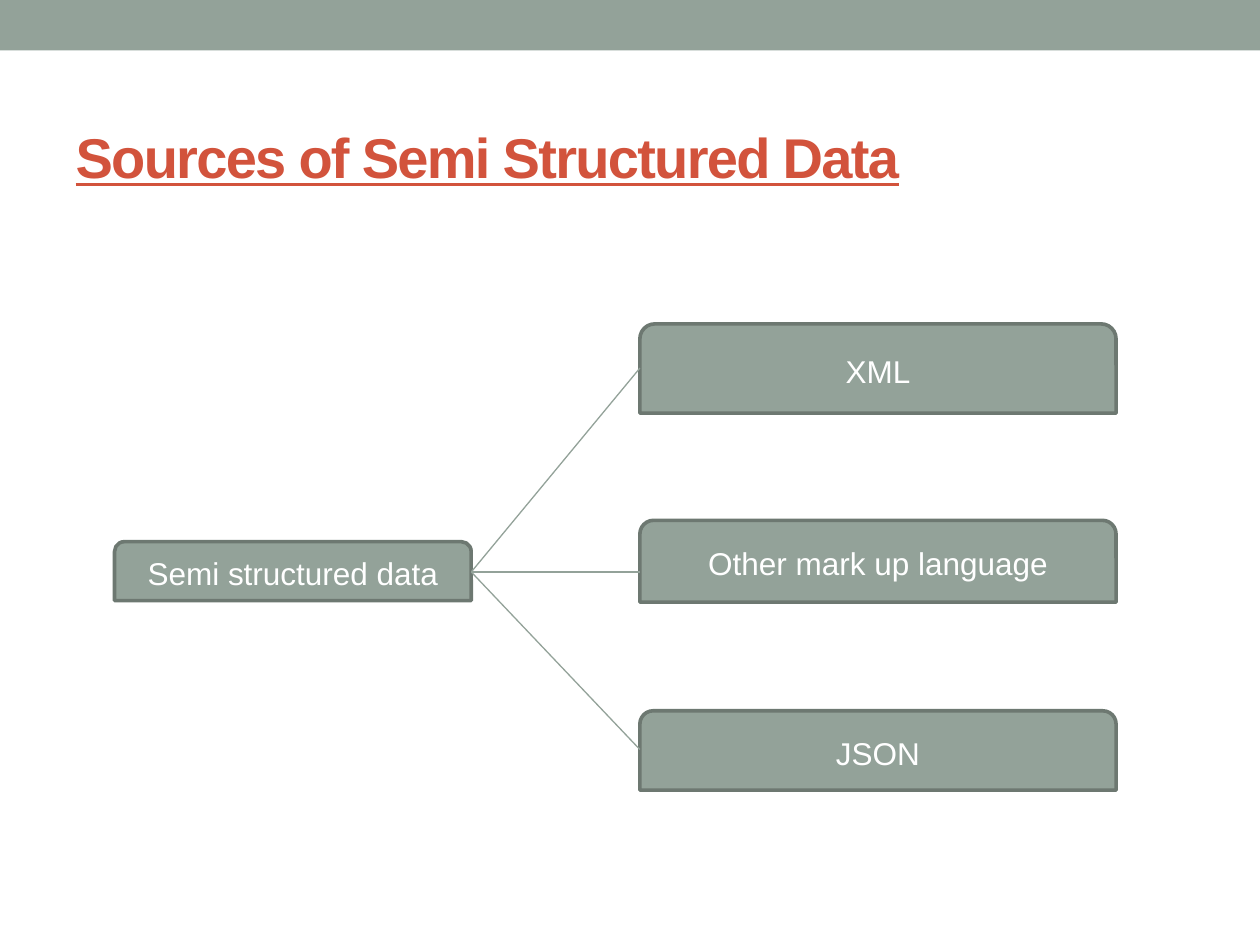
from pptx import Presentation
from pptx import util as u
from pptx.dml.color import RGBColor
from pptx.enum import shapes, text
from pptx.oxml.ns import qn
from lxml import etree

TITLE = "Sources of Semi Structured Data"
ROOT = ("Semi structured data", 10.92, 1.19)
SOURCES = [
    ("XML", 6.53, 1.8, 7.42),
    ("Other mark up language", 10.49, 1.65, 11.53),
    ("JSON", 14.33, 1.6, 15.11),
]
ROOT_LEFT, ROOT_WIDTH = 2.31, 7.19
SOURCE_LEFT, SOURCE_WIDTH = 12.9, 9.6
ROOT_RIGHT, ROOT_MIDDLE = ROOT_LEFT + ROOT_WIDTH, 11.53
SAGE, EDGE, RED, WHITE = "93A299", "6D7871", "D2533C", "FFFFFF"
FONT = "Arial"


def paint(color_format, value):
    color_format.rgb = RGBColor.from_string(value)


def style_text(frame, size, color, align):
    frame.word_wrap = True
    frame.vertical_anchor = text.MSO_ANCHOR.MIDDLE
    para = frame.paragraphs[0]
    para.alignment = align
    span = para.runs[0]
    span.font.name = FONT
    span.font.size = u.Pt(size)
    paint(span.font.color, color)
    return span


def add_block(page, kind, left, top, width, height):
    block = page.shapes.add_shape(
        kind, u.Cm(left), u.Cm(top), u.Cm(width), u.Cm(height))
    block.shadow.inherit = False
    block.fill.solid()
    paint(block.fill.fore_color, SAGE)
    return block


def add_box(page, label, left, top, width, height):
    box = add_block(page, shapes.MSO_SHAPE.ROUND_2_SAME_RECTANGLE,
                    left, top, width, height)
    box.line.width = u.Pt(2.08)
    paint(box.line.color, EDGE)
    box.text_frame.text = label
    style_text(box.text_frame, 18, WHITE, text.PP_ALIGN.CENTER)


def add_branch(page, end_y):
    branch = page.shapes.add_connector(
        shapes.MSO_CONNECTOR.STRAIGHT, u.Cm(ROOT_RIGHT), u.Cm(ROOT_MIDDLE),
        u.Cm(SOURCE_LEFT), u.Cm(end_y))
    branch.line.width = u.Pt(0.75)
    paint(branch.line.color, SAGE)
    etree.SubElement(branch._element.spPr, qn("a:effectLst"))


def add_title(page):
    title = page.shapes.title
    title.left, title.top = u.Cm(1.27), u.Cm(1.96)
    title.width, title.height = u.Cm(22.86), u.Cm(2.36)
    title.text_frame.text = TITLE
    span = style_text(title.text_frame, 32, RED, text.PP_ALIGN.LEFT)
    span.font.bold = True
    span.font.underline = True
    span._r.get_or_add_rPr().set("spc", "-100")


def main():
    deck = Presentation()
    deck.slide_width, deck.slide_height = u.Cm(25.4), u.Cm(19.05)
    page = deck.slides.add_slide(deck.slide_layouts[5])

    band = add_block(page, shapes.MSO_SHAPE.RECTANGLE, 0, 0, 25.4, 1.02)
    band.line.fill.background()
    add_title(page)

    label, top, height = ROOT
    add_box(page, label, ROOT_LEFT, top, ROOT_WIDTH, height)
    for label, top, height, _ in SOURCES:
        add_box(page, label, SOURCE_LEFT, top, SOURCE_WIDTH, height)
    for *_, end_y in SOURCES:
        add_branch(page, end_y)

    deck.save("out.pptx")


if __name__ == "__main__":
    main()
